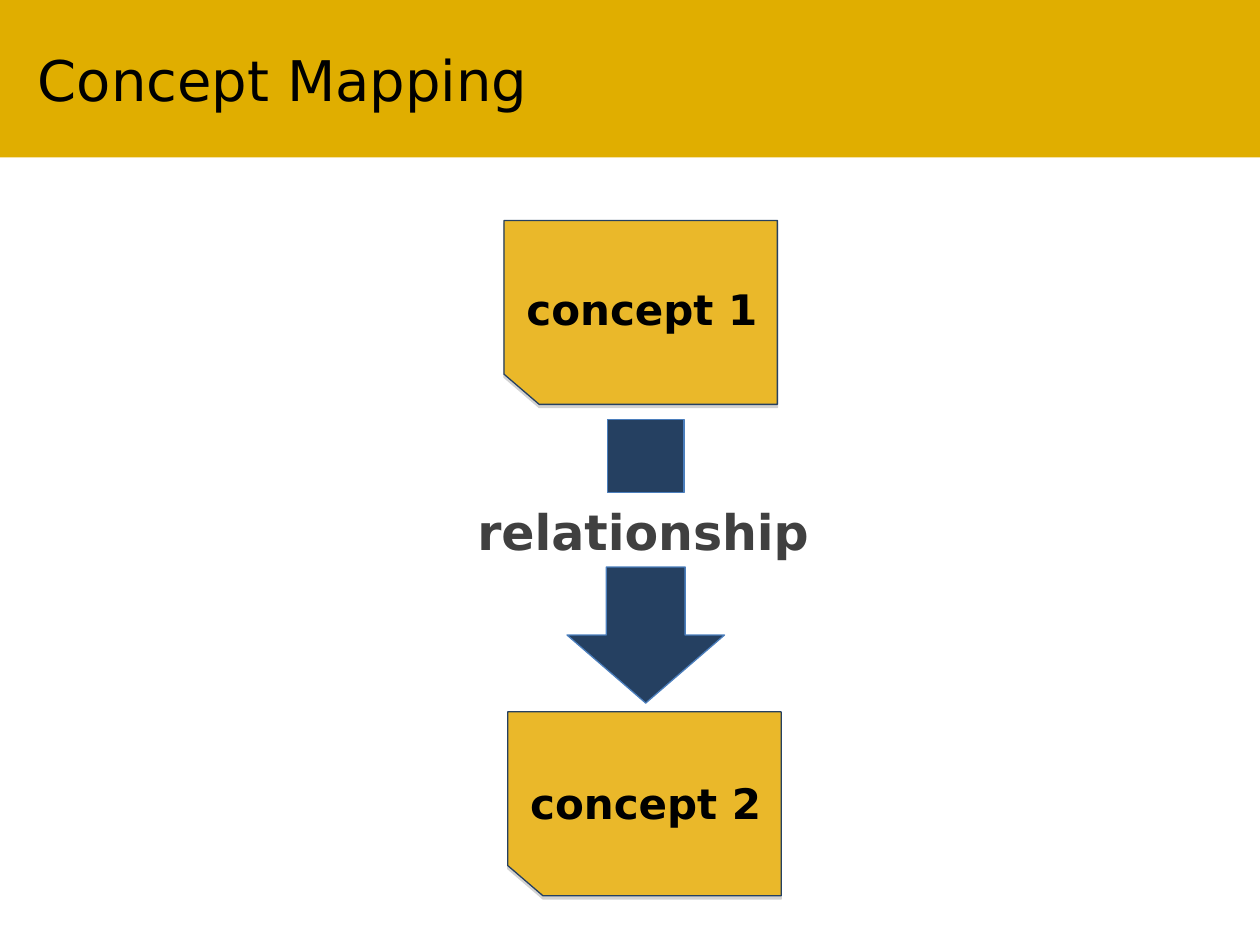
from dataclasses import dataclass

from lxml.etree import SubElement
from pptx import Presentation
from pptx.dml.color import RGBColor
from pptx.enum.shapes import MSO_SHAPE
from pptx.enum.text import MSO_ANCHOR, MSO_AUTO_SIZE, PP_ALIGN
from pptx.oxml.ns import qn
from pptx.util import Inches, Pt


@dataclass(frozen=True)
class Theme:
    """Colours, type sizes and font of the slide."""
    font: str = "DejaVu Sans"
    band: str = "E0AE00"
    card: str = "EAB82A"
    navy: str = "254061"
    edge: str = "4B7EBC"
    black: str = "000000"
    grey: str = "404040"
    shadow: str = "808080"
    title_size: int = 32
    link_size: int = 28
    card_size: int = 24
    line_width: float = 0.75


THEME = Theme()


def write(tf, text, size, color, bold=False):
    """Write one left-aligned line of formatted text."""
    p = tf.paragraphs[0]
    p.alignment = PP_ALIGN.LEFT
    r = p.add_run()
    r.text = text
    formats = {"name": THEME.font, "size": Pt(size), "bold": bold}
    for name, value in formats.items():
        setattr(r.font, name, value)
    r.font.color.rgb = RGBColor.from_string(color)


def add_label(s, text, box, size, color):
    """Add a bold text box that grows with its text."""
    tf = s.shapes.add_textbox(*map(Inches, box)).text_frame
    tf.word_wrap = True
    tf.auto_size = MSO_AUTO_SIZE.SHAPE_TO_FIT_TEXT
    write(tf, text, size, color, bold=True)


def paint(sp, fill, line):
    """Give a shape a solid fill and a thin outline without a shadow."""
    sp.shadow.inherit = False
    sp.fill.solid()
    sp.fill.fore_color.rgb = RGBColor.from_string(fill)
    sp.line.color.rgb = RGBColor.from_string(line)
    sp.line.width = Pt(THEME.line_width)


def add_drop_shadow(sp):
    """Cast a faint hard shadow straight down."""
    effects = sp._element.spPr.find(qn("a:effectLst"))
    shadow = SubElement(effects, qn("a:outerShdw"), blurRad="0",
                        dist=str(Pt(1.8)), dir="5400000", rotWithShape="0")
    color = SubElement(shadow, qn("a:srgbClr"), val=THEME.shadow)
    SubElement(color, qn("a:alpha"), val="35000")


def add_title(s, text, box):
    """Turn the title placeholder into a full-width band."""
    sp = s.shapes.title
    sp.left, sp.top, sp.width, sp.height = map(Inches, box)
    sp.fill.solid()
    sp.fill.fore_color.rgb = RGBColor.from_string(THEME.band)
    tf = sp.text_frame
    formats = {"margin_left": Inches(0.3), "margin_right": Inches(0.3),
               "vertical_anchor": MSO_ANCHOR.MIDDLE, "word_wrap": True}
    for name, value in formats.items():
        setattr(tf, name, value)
    write(tf, text, THEME.title_size, THEME.black)


def add_concept(s, text, box, label_top):
    """Add a card with a cut lower-left corner and its label."""
    x, y, w, h = box
    cut_x, cut_y = 0.28, 0.24
    points = [(x + w, y + h), (x + cut_x, y + h), (x, y + h - cut_y),
              (x, y), (x + w, y)]
    start, *rest = [(Inches(px), Inches(py)) for px, py in points]
    builder = s.shapes.build_freeform(*start)
    builder.add_line_segments(rest, close=True)
    sp = builder.convert_to_shape()
    paint(sp, THEME.card, THEME.navy)
    add_drop_shadow(sp)
    add_label(s, text, (x + 0.08, y + label_top, w, 0.5),
              THEME.card_size, THEME.black)


def add_relationship(s, text, box):
    """Add a stem, the link label and a down arrow within the box."""
    x, y, w, h = box
    stem_w, arrow_w, arrow_h = 0.61, 1.25, 1.08
    mid = x + 1.435
    parts = [
        (MSO_SHAPE.RECTANGLE, (mid - stem_w / 2, y, stem_w, 0.58)),
        (MSO_SHAPE.DOWN_ARROW,
         (mid - arrow_w / 2, y + h - arrow_h, arrow_w, arrow_h)),
    ]
    for kind, part in parts:
        sp = s.shapes.add_shape(kind, *map(Inches, part))
        paint(sp, THEME.navy, THEME.edge)
    add_label(s, text, (x, y + 0.6, w, 0.57), THEME.link_size, THEME.grey)


def main():
    """Build the concept mapping slide."""
    prs = Presentation()
    prs.slide_width, prs.slide_height = Inches(10), Inches(7.5)
    s = prs.slides.add_slide(prs.slide_layouts[5])
    add_title(s, "Concept Mapping", (0, 0, 10, 1.25))
    add_concept(s, "concept 1", (4, 1.75, 2.17, 1.46), 0.45)
    add_relationship(s, "relationship", (3.69, 3.33, 3, 2.25))
    add_concept(s, "concept 2", (4.03, 5.65, 2.17, 1.46), 0.47)
    prs.save("out.pptx")


if __name__ == "__main__":
    main()
